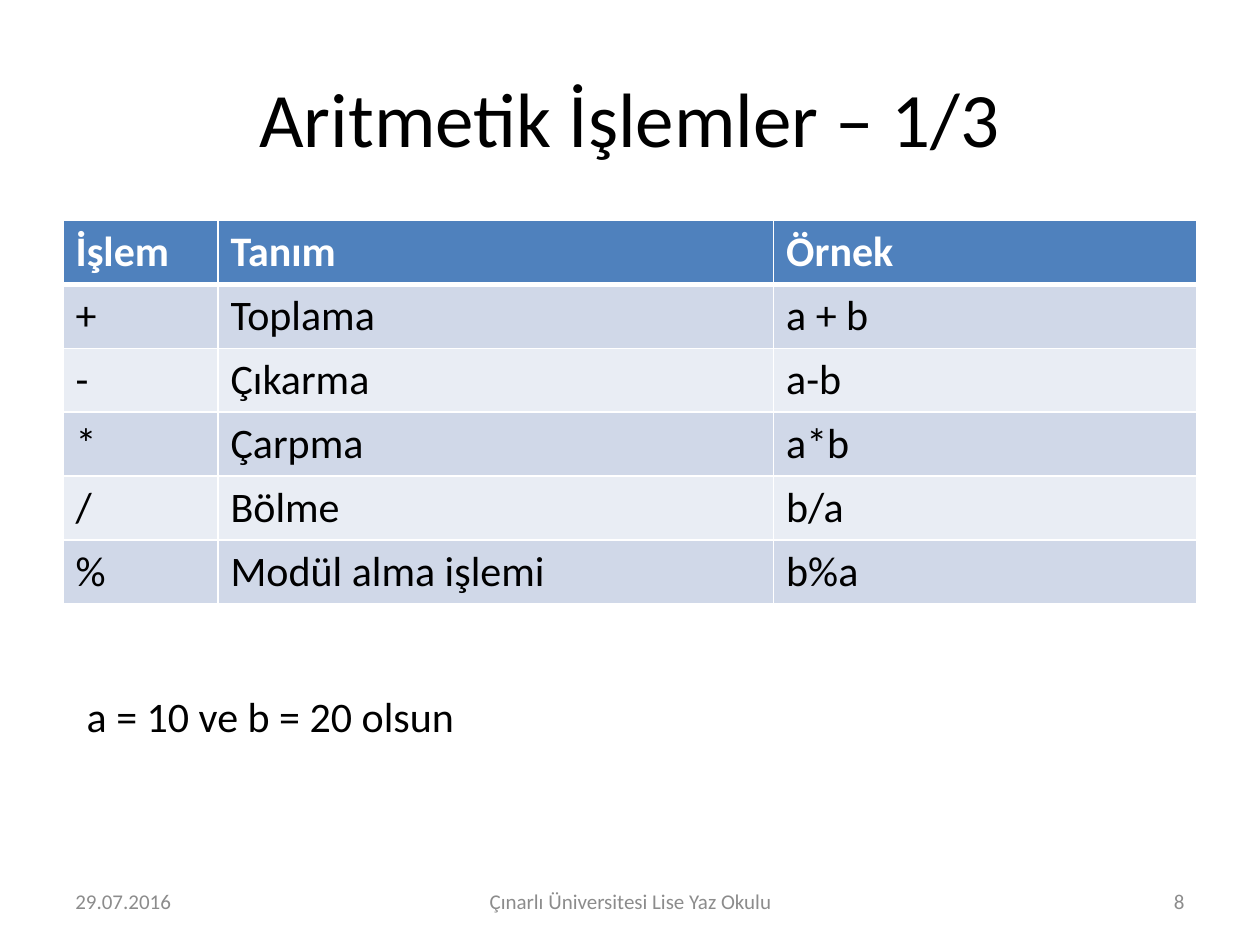
import dataclasses

import lxml.etree
import pptx
import pptx.dml.color
import pptx.enum.text
import pptx.oxml.ns
import pptx.util

Inches = pptx.util.Inches
Pt = pptx.util.Pt
Align = pptx.enum.text.PP_ALIGN
Anchor = pptx.enum.text.MSO_ANCHOR

FONT = "Calibri"
BLACK, WHITE, GREY = "000000", "FFFFFF", "8C8C8C"
HEADER_FILL = "4F81BD"
BAND_FILLS = ("D0D8E8", "E9EDF4")

COLUMN_WIDTHS = (1.23, 4.41, 3.36)
ROW_HEIGHT = 0.5
OPERATIONS = (
    ("İşlem", "Tanım", "Örnek"),
    ("+", "Toplama", "a + b"),
    ("-", "Çıkarma", "a-b"),
    ("*", "Çarpma", "a*b"),
    ("/", "Bölme", "b/a"),
    ("%", "Modül alma işlemi", "b%a"),
)


@dataclasses.dataclass(frozen=True)
class Label:
    text: str
    left: float
    top: float
    width: float
    height: float
    size: int
    color: str
    align: Align = Align.LEFT
    anchor: Anchor = Anchor.MIDDLE
    wrap: bool = True


LABELS = (
    Label("29.07.2016", 0.5, 6.95, 2.33, 0.4, 12, GREY),
    Label("Çınarlı Üniversitesi Lise Yaz Okulu", 3.42, 6.95, 3.17, 0.4, 12, GREY, Align.CENTER),
    Label("8", 7.17, 6.95, 2.33, 0.4, 12, GREY, Align.RIGHT),
    Label("a = 10 ve b = 20 olsun", 0.59, 5.43, 3.14, 0.5, 24, BLACK,
          anchor=Anchor.TOP, wrap=False),
)


def rgb(color: str) -> pptx.dml.color.RGBColor:
    return pptx.dml.color.RGBColor.from_string(color)


def write_text(frame, text: str, size: int, color: str,
               align: Align = Align.LEFT, bold: bool = False) -> None:
    frame.text = text
    paragraph = frame.paragraphs[0]
    paragraph.alignment = align
    font = paragraph.runs[0].font
    font.name, font.size, font.bold = FONT, Pt(size), bold
    font.color.rgb = rgb(color)


def place(shape, left: float, top: float, width: float, height: float) -> None:
    shape.left, shape.top = Inches(left), Inches(top)
    shape.width, shape.height = Inches(width), Inches(height)


def add_label(slide, label: Label) -> None:
    box = slide.shapes.add_textbox(
        Inches(label.left), Inches(label.top), Inches(label.width), Inches(label.height))
    frame = box.text_frame
    write_text(frame, label.text, label.size, label.color, label.align)
    frame.word_wrap = label.wrap
    frame.vertical_anchor = label.anchor
    if not label.wrap:
        frame.auto_size = pptx.enum.text.MSO_AUTO_SIZE.SHAPE_TO_FIT_TEXT


def set_borders(cell, widths: dict[str, int]) -> None:
    """Draw white cell borders; widths are keyed in schema order L, R, T, B."""
    qn = pptx.oxml.ns.qn
    properties = cell._tc.get_or_add_tcPr()
    for index, (side, width) in enumerate(widths.items()):
        line = lxml.etree.Element(qn(f"a:ln{side}"), w=str(Pt(width)))
        fill = lxml.etree.SubElement(line, qn("a:solidFill"))
        lxml.etree.SubElement(fill, qn("a:srgbClr"), val=WHITE)
        properties.insert(index, line)


def add_operations_table(slide) -> None:
    table = slide.shapes.add_table(
        len(OPERATIONS), len(COLUMN_WIDTHS), Inches(0.5), Inches(1.75),
        Inches(sum(COLUMN_WIDTHS)), Inches(ROW_HEIGHT * len(OPERATIONS))).table
    for column, width in zip(table.columns, COLUMN_WIDTHS):
        column.width = Inches(width)

    for row, texts in enumerate(OPERATIONS):
        header = row == 0
        for column, text in enumerate(texts):
            cell = table.cell(row, column)
            write_text(cell.text_frame, text, 24, WHITE if header else BLACK, bold=header)
            cell.fill.solid()
            cell.fill.fore_color.rgb = rgb(HEADER_FILL if header else BAND_FILLS[(row - 1) % 2])
            # A thick rule separates the header from the body
            set_borders(cell, {"L": 1, "R": 1, "T": 3 if row == 1 else 1, "B": 3 if header else 1})


def main() -> None:
    deck = pptx.Presentation()
    deck.slide_width, deck.slide_height = Inches(10), Inches(7.5)
    slide = deck.slides.add_slide(deck.slide_layouts[5])

    # Title
    title = slide.shapes.title
    place(title, 0.5, 0.3, 9, 1.25)
    write_text(title.text_frame, "Aritmetik İşlemler – 1/3", 44, BLACK, Align.CENTER)
    title.text_frame.vertical_anchor = Anchor.MIDDLE

    # Operator table
    add_operations_table(slide)

    # Footer and the assumption below the table
    for label in LABELS:
        add_label(slide, label)

    deck.save("out.pptx")


if __name__ == "__main__":
    main()
